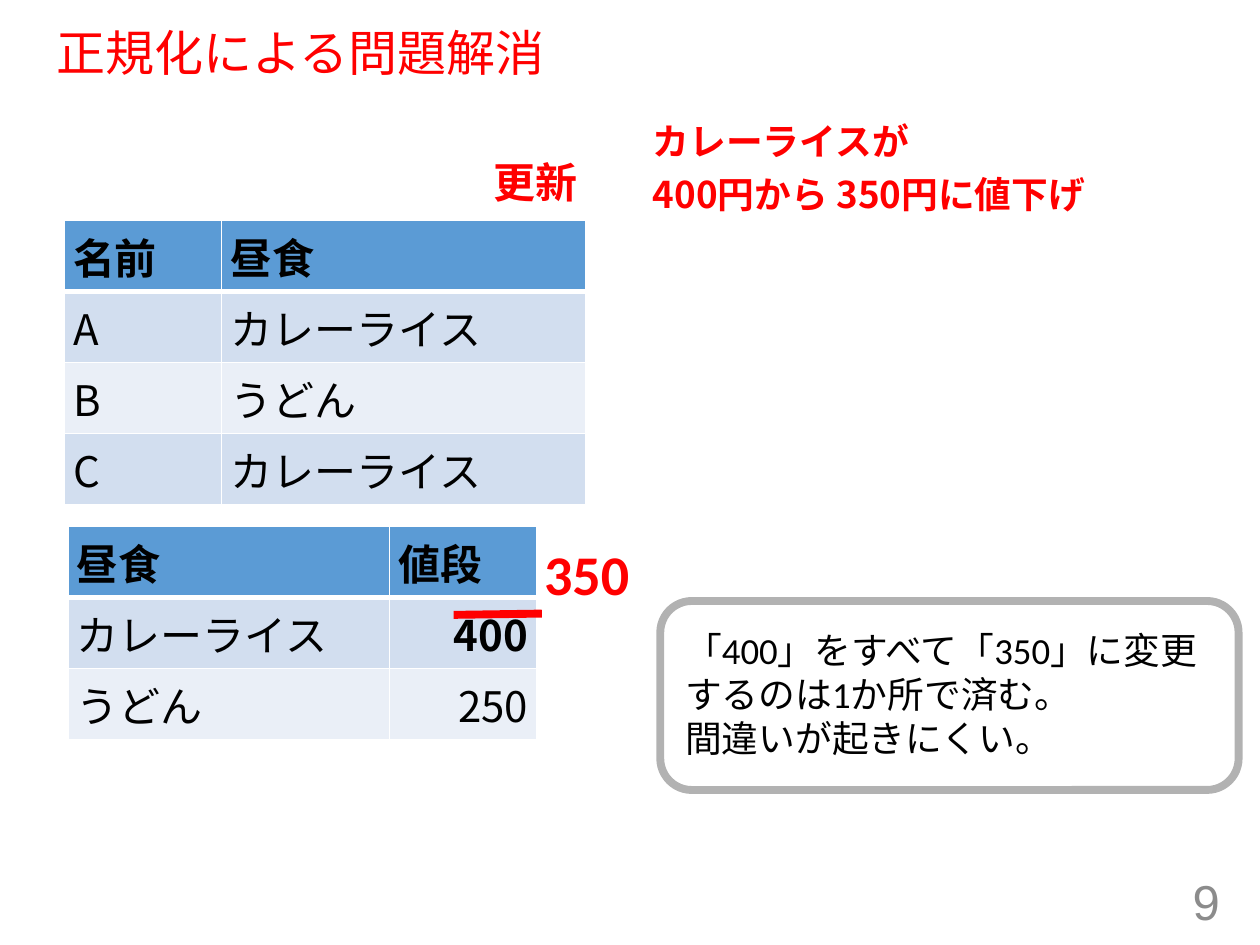
"""Build the slide on how normalization resolves update problems."""
from dataclasses import dataclass
from typing import Optional

from lxml.etree import SubElement
from pptx import Presentation
from pptx.dml.color import RGBColor
from pptx.enum.shapes import MSO_CONNECTOR, MSO_SHAPE
from pptx.enum.text import MSO_ANCHOR, PP_ALIGN
from pptx.oxml.ns import qn
from pptx.util import Inches, Pt

COLORS = {
    "red": "FF0000", "black": "000000", "white": "FFFFFF", "gray": "8C8C8C",
    "header": "5B9BD5", "odd": "D2DEEF", "even": "EAEFF7",
}
NOTO = "Noto Sans CJK JP"


@dataclass
class Label:
    """A text box with uniform formatting."""
    box: tuple[float, float, float, float]
    lines: list[str]
    size: float
    font: str
    color: str = "red"
    bold: bool = False
    align: PP_ALIGN = PP_ALIGN.LEFT
    anchor: MSO_ANCHOR = MSO_ANCHOR.TOP
    wrap: bool = True
    inset: tuple[float, float] = (0.1, 0.05)
    spacing: Optional[float] = None
    before: float = 0


@dataclass
class Grid:
    """A table with a header row."""
    left: float
    top: float
    cols: list[float]
    rows: list[list[str]]
    bold: tuple[str, ...] = ()


LABELS = [
    Label((4.22, 4.23, 0.89, 0.64), ["350"], 32, "Calibri", bold=True, wrap=False),
    Label((0.35, 0.19, 9.25, 0.51), ["正規化による問題解消"], 28, "Arial",
          anchor=MSO_ANCHOR.MIDDLE, spacing=0.9),
    Label((7.53, 6.95, 2.25, 0.4), ["9"], 28, "Arial", "gray",
          align=PP_ALIGN.RIGHT, anchor=MSO_ANCHOR.MIDDLE),
    Label((3.82, 1.19, 3.08, 0.5), ["更新"], 24, NOTO, bold=True),
    Label((5.11, 0.94, 4.59, 2.33), ["カレーライスが", "400円から 350円に値下げ"], 21, NOTO,
          bold=True, inset=(0.07, 0.04), spacing=0.9, before=8),
    Label((5.34, 4.93, 4.37, 1.16),
          ["「400」をすべて「350」に変更するのは1か所で済む。", "間違いが起きにくい。"],
          21, "Calibri", "black"),
]

GRIDS = [
    Grid(0.54, 4.18, [2.55, 1.17],
         [["昼食", "値段"], ["カレーライス", "400"], ["うどん", "250"]], ("400",)),
    Grid(0.51, 1.75, [1.25, 2.89],
         [["名前", "昼食"], ["A", "カレーライス"], ["B", "うどん"], ["C", "カレーライス"]]),
]


def rgb(name: str) -> RGBColor:
    """Look up a named colour."""
    return RGBColor.from_string(COLORS[name])


def format_run(r, size: float, font: str, color: str, bold: bool) -> None:
    """Format a run with one font for Latin and East Asian text."""
    r.font.size, r.font.name, r.font.bold = Pt(size), font, bold
    r.font.color.rgb = rgb(color)
    SubElement(r.font._element, qn("a:ea"), typeface=font)


def add_label(s, label: Label) -> None:
    """Draw a text box."""
    tf = s.shapes.add_textbox(*map(Inches, label.box)).text_frame
    tf.word_wrap, tf.vertical_anchor = label.wrap, label.anchor
    tf.margin_left = tf.margin_right = Inches(label.inset[0])
    tf.margin_top = tf.margin_bottom = Inches(label.inset[1])
    tf.text = "\n".join(label.lines)
    for p in tf.paragraphs:
        p.alignment, p.space_before = label.align, Pt(label.before)
        p.line_spacing = label.spacing
        for r in p.runs:
            format_run(r, label.size, label.font, label.color, label.bold)


def set_borders(cell, top: float, bottom: float) -> None:
    """Give a cell white borders."""
    tc_pr = cell._tc.get_or_add_tcPr()
    for side, width in (("L", 1), ("R", 1), ("T", top), ("B", bottom)):
        ln = SubElement(tc_pr, qn(f"a:ln{side}"), w=str(Pt(width)))
        fill = SubElement(ln, qn("a:solidFill"))
        SubElement(fill, qn("a:srgbClr"), val=COLORS["white"])


def add_grid(s, grid: Grid, row_height: float = 0.56) -> None:
    """Draw a banded table."""
    tbl = s.shapes.add_table(
        len(grid.rows), len(grid.cols), Inches(grid.left), Inches(grid.top),
        Inches(sum(grid.cols)), Inches(row_height * len(grid.rows))).table
    for col, width in zip(tbl.columns, grid.cols):
        col.width = Inches(width)
    for i, row in enumerate(grid.rows):
        band = "header" if i == 0 else "odd" if i % 2 else "even"
        for j, text in enumerate(row):
            cell = tbl.cell(i, j)
            set_borders(cell, 3 if i == 1 else 1, 3 if i == 0 else 1)
            cell.fill.solid()
            cell.fill.fore_color.rgb = rgb(band)
            cell.margin_left = cell.margin_right = Inches(0.07)
            cell.margin_top = cell.margin_bottom = Inches(0.04)
            cell.text_frame.text = text
            p = cell.text_frame.paragraphs[0]
            p.alignment = PP_ALIGN.RIGHT if text.isdigit() else PP_ALIGN.LEFT
            format_run(p.runs[0], 24, NOTO, "black", i == 0 or text in grid.bold)


def add_strike(s) -> None:
    """Draw the red line over the old price."""
    line = s.shapes.add_connector(
        MSO_CONNECTOR.STRAIGHT, *map(Inches, (3.6, 4.88, 4.3, 4.87)))
    line.line.color.rgb, line.line.width = rgb("red"), Pt(4.5)
    SubElement(line._element.spPr, qn("a:effectLst"))


def add_frame(s) -> None:
    """Draw the rounded frame of the remark."""
    sp = s.shapes.add_shape(
        MSO_SHAPE.ROUNDED_RECTANGLE, *map(Inches, (5.24, 4.77, 4.59, 1.5)))
    sp.shadow.inherit = False
    sp.fill.background()
    sp.line.color.rgb, sp.line.width = rgb("black"), Pt(4.5)
    color = sp.line._ln.find(".//" + qn("a:srgbClr"))
    SubElement(color, qn("a:alpha"), val="30000")


def main() -> None:
    """Build and save the slide."""
    prs = Presentation()
    prs.slide_width, prs.slide_height = Inches(10), Inches(7.5)
    s = prs.slides.add_slide(prs.slide_layouts[6])
    for grid in GRIDS:
        add_grid(s, grid)
    add_strike(s)
    add_frame(s)
    for label in LABELS:
        add_label(s, label)
    prs.save("out.pptx")


if __name__ == "__main__":
    main()
